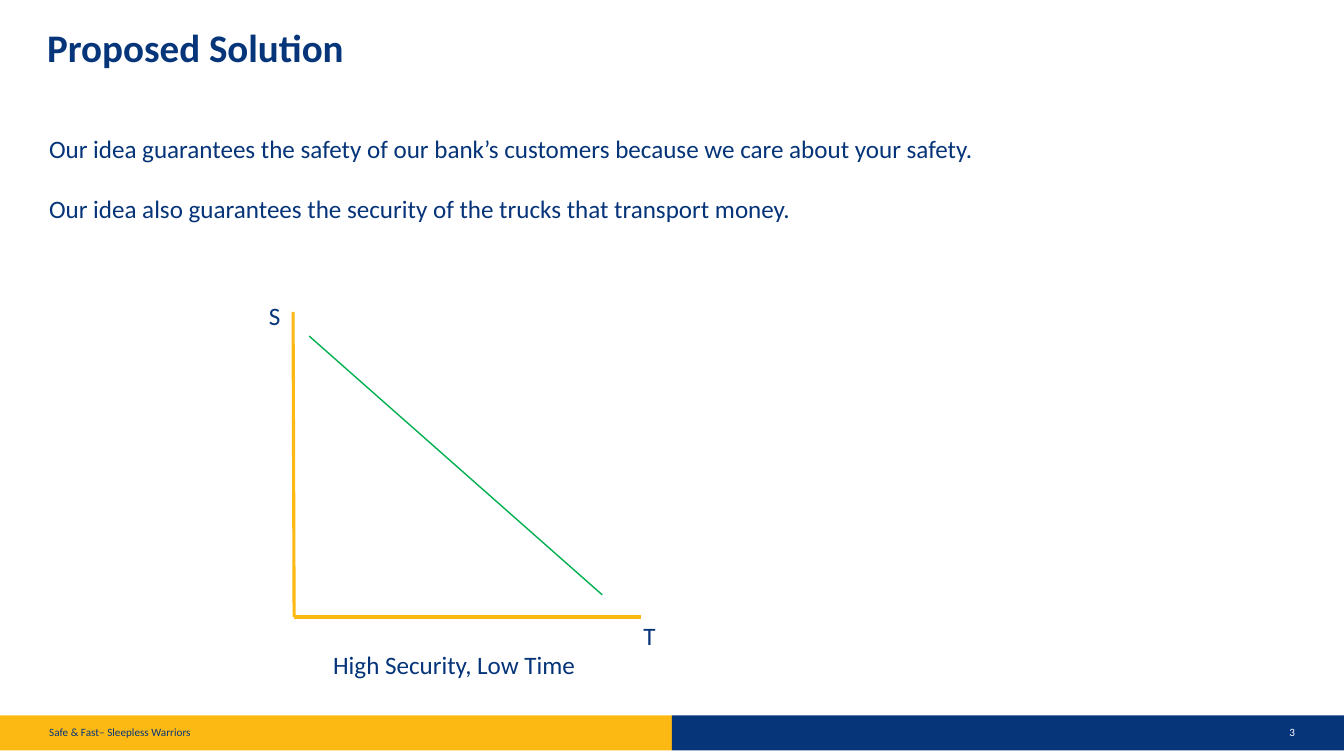
from lxml import etree
from pptx import Presentation
from pptx.dml.color import RGBColor
from pptx.enum.shapes import MSO_CONNECTOR, MSO_SHAPE
from pptx.enum.text import PP_ALIGN
from pptx.oxml.ns import qn
from pptx.util import Inches, Pt

RECTANGLE = MSO_SHAPE.RECTANGLE
STRAIGHT = MSO_CONNECTOR.STRAIGHT
LEFT, RIGHT = PP_ALIGN.LEFT, PP_ALIGN.RIGHT

FONT = "Calibri"
COLORS = {
    "yellow": "FDB913",
    "navy": "06357A",
    "text": "063479",
    "green": "00B050",
    "white": "FFFFFF",
}
# The page measures a whole number of points
SLIDE_WIDTH, SLIDE_HEIGHT = Pt(964), Pt(539)
FOOTER_TOP, FOOTER_HEIGHT = 7.13, 0.35


def color(name):
    return RGBColor.from_string(COLORS[name])


def add_text(slide, text, left, top, width, height, *, size=18, color_name="text",
             bold=False, align=LEFT, inset=True, wrap=True, line_spacing=None,
             paragraph_gap=0):
    """Add a text box; each line of the text becomes a paragraph."""
    box = slide.shapes.add_textbox(Inches(left), Inches(top), Inches(width), Inches(height))
    frame = box.text_frame
    frame.word_wrap = wrap
    if not inset:
        frame.margin_left = frame.margin_right = Inches(0)
        frame.margin_top = frame.margin_bottom = Inches(0)
    frame.text = text
    for index, paragraph in enumerate(frame.paragraphs):
        paragraph.alignment = align
        if line_spacing:
            paragraph.line_spacing = line_spacing
        if index and paragraph_gap:
            paragraph.space_before = Pt(paragraph_gap)
        font = paragraph.font
        font.name, font.size, font.bold = FONT, Pt(size), bold
        font.color.rgb = color(color_name)


def add_band(slide, left, width, color_name):
    band = slide.shapes.add_shape(RECTANGLE, left, Inches(FOOTER_TOP),
                                  width, Inches(FOOTER_HEIGHT))
    band.shadow.inherit = False
    band.fill.solid()
    band.fill.fore_color.rgb = color(color_name)
    band.line.fill.background()


def add_line(slide, start, end, color_name, width):
    line = slide.shapes.add_connector(STRAIGHT, *map(Inches, start + end))
    line.line.color.rgb = color(color_name)
    line.line.width = Pt(width)
    etree.SubElement(line._element.spPr, qn("a:effectLst"))


def add_footer(slide):
    half = SLIDE_WIDTH // 2
    add_band(slide, 0, half, "yellow")
    add_band(slide, half, half, "navy")
    add_text(slide, "Safe & Fast– Sleepless Warriors", 0.49, 7.23, 1.43, 0.13,
             size=8, color_name="navy", inset=False, wrap=False)
    add_text(slide, "3", 11.69, 7.23, 1.21, 0.13,
             size=8, color_name="white", align=RIGHT, inset=False)


def add_security_graph(slide):
    origin = (2.93, 6.15)
    add_line(slide, (2.92, 3.11), origin, "yellow", 2.25)
    add_line(slide, origin, (6.39, 6.15), "yellow", 2.25)
    add_line(slide, (3.08, 3.35), (6, 5.93), "green", 1)
    add_text(slide, "High Security, Low Time", 3.22, 6.42, 2.78, 0.4)
    add_text(slide, "S", 2.58, 2.95, 0.35, 0.4)
    add_text(slide, "T", 6.31, 6.14, 0.35, 0.4)


def main():
    presentation = Presentation()
    presentation.slide_width = SLIDE_WIDTH
    presentation.slide_height = SLIDE_HEIGHT
    slide = presentation.slides.add_slide(presentation.slide_layouts[6])

    add_footer(slide)

    # Title and statements
    add_text(slide, "Proposed Solution", 0.47, 0.29, 11.57, 0.58, size=28,
             color_name="navy", bold=True, inset=False, line_spacing=0.9)
    add_text(slide,
             "Our idea guarantees the safety of our bank’s customers "
             "because we care about your safety.\n"
             "Our idea also guarantees the security of the trucks that transport money.",
             0.39, 1.28, 12.03, 1.01, paragraph_gap=21.5)

    # Security against time
    add_security_graph(slide)

    presentation.save("out.pptx")


if __name__ == "__main__":
    main()
